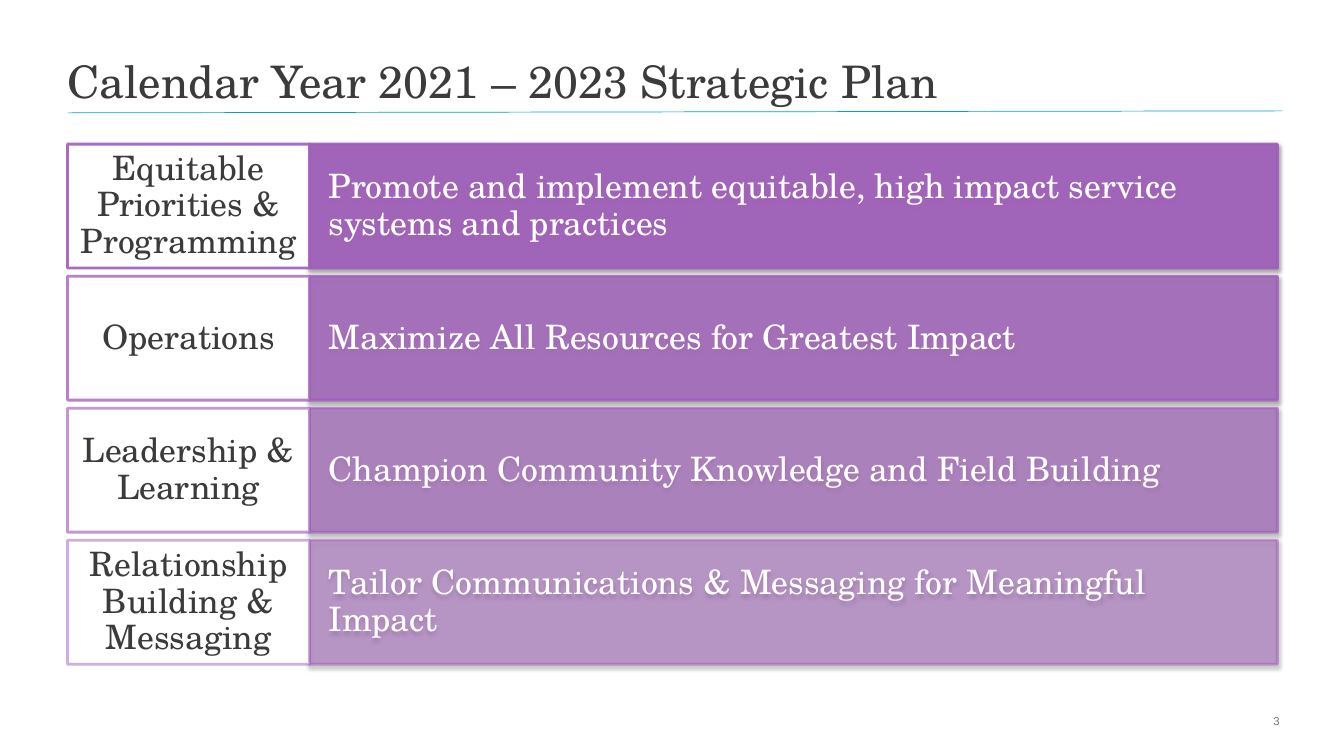
from lxml.etree import SubElement
from pptx import Presentation
from pptx.dml.color import RGBColor
from pptx.enum.shapes import MSO_CONNECTOR, MSO_SHAPE
from pptx.enum.text import MSO_ANCHOR, PP_ALIGN
from pptx.oxml.ns import qn
from pptx.util import Inches, Pt

SERIF = "TeX Gyre Schola"
PURPLE, INK, WHITE = "A05DBB", "3B3B3B", "FFFFFF"
LEFT, TOP = 0.67, 1.43
AREA_WIDTH, GOAL_WIDTH = 2.4, 9.6
ROW_HEIGHT, ROW_PITCH = 1.23, 1.31

# Focus area, goal, opacity in percent
PRIORITIES = [
    ("Equitable Priorities & Programming",
     "Promote and implement equitable, high impact service systems and practices", 90),
    ("Operations", "Maximize All Resources for Greatest Impact", 77),
    ("Leadership & Learning", "Champion Community Knowledge and Field Building", 63),
    ("Relationship Building & Messaging",
     "Tailor Communications & Messaging for Meaningful Impact", 50),
]


def rgb(value):
    return RGBColor.from_string(value)


def set_opacity(color_format_parent, percent):
    """Add an alpha value to the solid colour below the given element."""
    color = color_format_parent.find(qn("a:solidFill"))[0]
    SubElement(color, qn("a:alpha"), val=str(percent * 1000))


def add_shadow(shape):
    effects = shape._element.spPr.find(qn("a:effectLst"))
    shadow = SubElement(effects, qn("a:outerShdw"), blurRad=str(Pt(3.1)),
                        dist=str(Pt(1.6)), dir="5400000", rotWithShape="0")
    color = SubElement(shadow, qn("a:srgbClr"), val="000000")
    SubElement(color, qn("a:alpha"), val="38000")


def write(shape, text, size, font_name, color, align, anchor, insets):
    frame = shape.text_frame
    frame.text = text
    frame.word_wrap = True
    frame.vertical_anchor = anchor
    frame.margin_left = frame.margin_right = Inches(insets[0])
    frame.margin_top = frame.margin_bottom = Inches(insets[1])
    paragraph = frame.paragraphs[0]
    paragraph.alignment = align
    font = paragraph.runs[0].font
    font.size, font.name, font.bold = Pt(size), font_name, False
    font.color.rgb = rgb(color)
    return paragraph


def add_title(slide, text):
    title = slide.shapes.title
    title.left, title.top = Inches(LEFT), Inches(0.14)
    title.width, title.height = Inches(12), Inches(0.93)
    paragraph = write(title, text, 32, SERIF, INK, PP_ALIGN.LEFT, MSO_ANCHOR.BOTTOM, (0, 0))
    paragraph.line_spacing = Pt(24.8)
    paragraph.space_before = Pt(0)


def add_title_rule(slide):
    rule = slide.shapes.add_connector(MSO_CONNECTOR.STRAIGHT, Inches(LEFT), Inches(1.12),
                                      Inches(12.72), Inches(1.1))
    rule.line.color.rgb = rgb("00A5C1")
    rule.line.width = Pt(0.5)
    SubElement(rule._element.spPr, qn("a:effectLst"))


def add_panel(slide, left, top, width, fill, opacity):
    panel = slide.shapes.add_shape(MSO_SHAPE.RECTANGLE, Inches(left), Inches(top),
                                   Inches(width), Inches(ROW_HEIGHT))
    panel.shadow.inherit = False
    panel.fill.solid()
    panel.fill.fore_color.rgb = rgb(fill)
    panel.line.color.rgb = rgb(PURPLE)
    panel.line.width = Pt(2)
    set_opacity(panel._element.spPr.find(qn("a:ln")), opacity)
    return panel


def add_priority(slide, top, area, goal, opacity):
    # Goal bar, tinted and shadowed
    goal_bar = add_panel(slide, LEFT + AREA_WIDTH, top, GOAL_WIDTH, PURPLE, opacity)
    set_opacity(goal_bar._element.spPr, opacity)
    add_shadow(goal_bar)
    goal_text = write(goal_bar, goal, 24, SERIF, WHITE, PP_ALIGN.LEFT,
                      MSO_ANCHOR.MIDDLE, (0.19, 0.31))
    # Focus area, outlined
    area_box = add_panel(slide, LEFT, top, AREA_WIDTH, WHITE, opacity)
    area_text = write(area_box, area, 24, SERIF, INK, PP_ALIGN.CENTER,
                      MSO_ANCHOR.MIDDLE, (0.13, 0.12))
    goal_text.line_spacing = area_text.line_spacing = 0.9


def add_page_number(slide, number):
    page_number = slide.shapes.add_textbox(Inches(9.68), Inches(6.95), Inches(3.11), Inches(0.4))
    write(page_number, number, 8.2, "Arial", "777877", PP_ALIGN.RIGHT,
          MSO_ANCHOR.MIDDLE, (0.1, 0.05)).space_after = Pt(6)


def main():
    deck = Presentation()
    deck.slide_width, deck.slide_height = Inches(13.33), Inches(7.5)
    slide = deck.slides.add_slide(deck.slide_layouts[5])
    add_title_rule(slide)
    add_title(slide, "Calendar Year 2021 – 2023 Strategic Plan")
    for row, (area, goal, opacity) in enumerate(PRIORITIES):
        add_priority(slide, TOP + row * ROW_PITCH, area, goal, opacity)
    add_page_number(slide, "3")
    deck.save("out.pptx")


if __name__ == "__main__":
    main()
